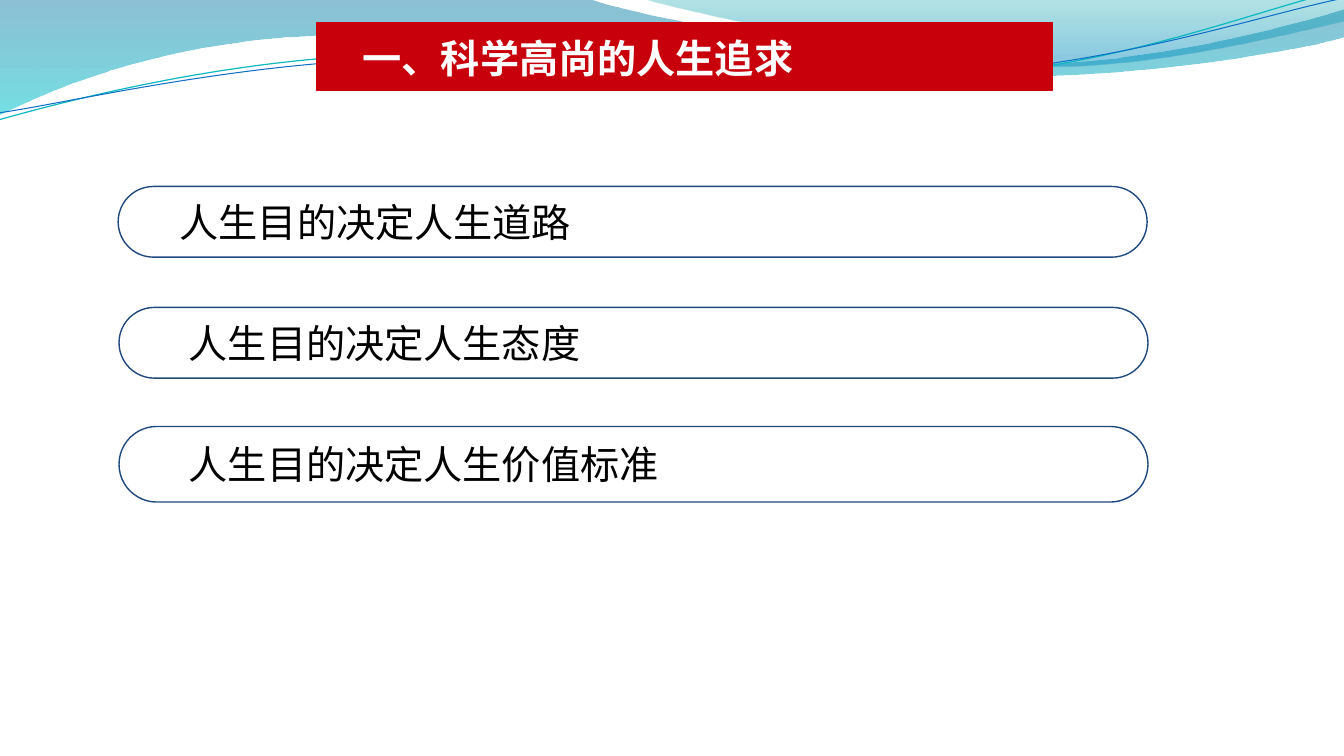
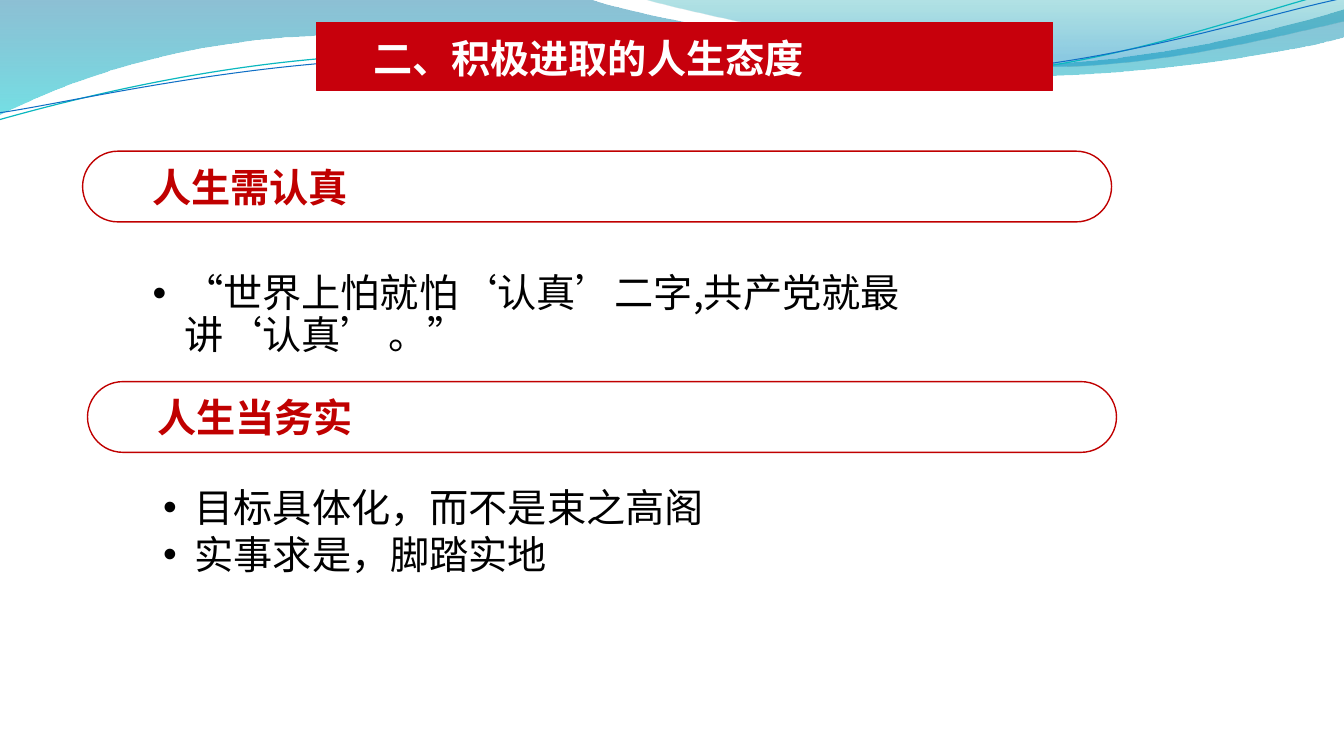
from dataclasses import dataclass

from lxml import etree
from pptx import Presentation
from pptx.dml.color import RGBColor
from pptx.enum import shapes, text
from pptx.oxml import ns
from pptx.util import Pt


@dataclass(frozen=True)
class Theme:
    font: str = "Noto Sans CJK SC"
    bullet_font: str = "Arial"
    size: int = 28
    black: str = "000000"
    white: str = "FFFFFF"
    navy: str = "1F497D"
    red: str = "C00000"
    banner: str = "C7000C"
    teal: str = "0AB8BF"
    blue: str = "0F6FC6"
    large_wave: tuple = ((0, "0074A1", 45), (1, "00C6CF", 55))
    small_wave: tuple = ((0, "00A1A9", 30), (0.8, "008BBF", 45))


THEME = Theme()
PILL_WIDTH, PILL_HEIGHT = 735, 50.5

LARGE_WAVE = [
    (0, 0), (422.5, -0.5),
    (456.5, 12, 637, 45.5, 728, 45.5), (819.5, 45.5, 920, 18.5, 960, 6.5),
    (961, 26),
    (944, 31.5, 835, 54.5, 715.5, 54), (597, 54, 366.5, 20, 247, 24.5),
    (124, 26, 44, 60, -0.5, 81.5),
]
SMALL_WAVE = [
    (460, -0.5),
    (489, 8, 654.5, 44.5, 738, 47), (821.5, 49.5, 923, 23, 960, 15),
    (960, 0),
]
TEAL_CURVE = [
    (-0.5, 85.5),
    (46, 72.5, 152, 44.5, 265.5, 39.5), (379.5, 34.5, 569, 62.5, 684, 54.5),
    (799, 47.5, 901.5, 6, 958.5, -7),
]
BLUE_CURVE = [
    (0, 80.5),
    (45.5, 74, 157, 47.5, 272, 42.5), (386.5, 38, 573, 59, 687.5, 52),
    (803, 44.5, 903.5, 10, 960.5, -1.5),
]


def color(value):
    return RGBColor.from_string(value)


def add_outline(slide, segments, close):
    points = [
        (Pt(segment[i]), Pt(segment[i + 1]))
        for segment in segments for i in range(0, len(segment), 2)
    ]
    builder = slide.shapes.build_freeform(*points[0])
    builder.add_line_segments(points[1:], close=close)
    shape = builder.convert_to_shape()
    shape.shadow.inherit = False
    lines = iter(list(shape.element.iter(ns.qn("a:lnTo"))))
    for segment in segments[1:]:
        first = next(lines)
        if len(segment) == 6:
            first.tag = ns.qn("a:cubicBezTo")
            for line in (next(lines), next(lines)):
                first.append(line[0])
                line.getparent().remove(line)
    return shape


def add_wave(slide, segments, stops):
    shape = add_outline(slide, segments, True)
    shape.line.fill.background()
    shape.fill.gradient()
    shape.fill.gradient_angle = 270
    for stop, (position, value, _) in zip(shape.fill.gradient_stops, stops):
        stop.position = position
        stop.color.rgb = color(value)
    marks = shape.element.iter(ns.qn("a:srgbClr"))
    for mark, (_, _, opacity) in zip(marks, stops):
        etree.SubElement(mark, ns.qn("a:alpha"), val=str(opacity * 1000))
    return shape


def add_curve(slide, segments, value, width):
    shape = add_outline(slide, segments, False)
    shape.fill.background()
    shape.line.color.rgb = color(value)
    shape.line.width = Pt(width)
    return shape


def add_waves_to_layout(slide):
    waves = [
        add_wave(slide, LARGE_WAVE, THEME.large_wave),
        add_wave(slide, SMALL_WAVE, THEME.small_wave),
        add_curve(slide, TEAL_CURVE, THEME.teal, 0.85),
        add_curve(slide, BLUE_CURVE, THEME.blue, 0.75),
    ]
    for number, wave in enumerate(waves, 101):
        wave.element.nvSpPr.cNvPr.id = number
        slide.slide_layout.shapes.element.append(wave.element)


def style_paragraph(paragraph, value, bold=False):
    paragraph.alignment = text.PP_ALIGN.LEFT
    font = paragraph.font
    font.name = THEME.font
    font.size = Pt(THEME.size)
    font.bold = bold
    font.color.rgb = color(value)
    properties = paragraph._p.pPr.find(ns.qn("a:defRPr"))
    etree.SubElement(properties, ns.qn("a:ea"), typeface=THEME.font)


def fill_label(shape, wording, value, indent, bold, top=0):
    frame = shape.text_frame
    frame.text = wording
    frame.word_wrap = True
    frame.auto_size = text.MSO_AUTO_SIZE.NONE
    frame.vertical_anchor = text.MSO_ANCHOR.MIDDLE
    frame.margin_left, frame.margin_top = Pt(indent), Pt(top)
    frame.margin_right = frame.margin_bottom = 0
    style_paragraph(frame.paragraphs[0], value, bold)


def set_title(slide, wording, indent):
    title = slide.shapes.title
    title.left, title.top, title.width, title.height = Pt(226), Pt(16), Pt(526), Pt(48.5)
    title.fill.solid()
    title.fill.fore_color.rgb = color(THEME.banner)
    title.line.color.rgb = color(THEME.banner)
    title.line.width = Pt(0.75)
    fill_label(title, wording, THEME.white, indent, True, top=1.5)


def add_pill(slide, wording, left, top, value, outline, bold=False, indent=42.5, height=PILL_HEIGHT):
    pill = slide.shapes.add_shape(
        shapes.MSO_SHAPE.ROUNDED_RECTANGLE, Pt(left), Pt(top), Pt(PILL_WIDTH), Pt(height))
    pill.adjustments[0] = 0.5
    pill.shadow.inherit = False
    pill.fill.background()
    pill.line.color.rgb = color(outline)
    pill.line.width = Pt(1)
    fill_label(pill, wording, value, indent, bold)


def add_bullets(slide, lines, left, top, width, height, line_spacing=1.0, space_before=0):
    frame = slide.shapes.add_textbox(Pt(left), Pt(top), Pt(width), Pt(height)).text_frame
    frame.word_wrap = True
    frame.text = "\n".join(lines)
    for paragraph in frame.paragraphs:
        paragraph.line_spacing = line_spacing
        paragraph.space_before = Pt(space_before)
        style_paragraph(paragraph, THEME.black)
        properties = paragraph._p.pPr
        properties.set("marL", str(Pt(22.5)))
        properties.set("indent", str(-Pt(22.5)))
        defaults = properties.find(ns.qn("a:defRPr"))
        defaults.addprevious(etree.Element(ns.qn("a:buFont"), typeface=THEME.bullet_font))
        defaults.addprevious(etree.Element(ns.qn("a:buChar"), char="•"))


def build_pursuit(slide):
    set_title(slide, "一、科学高尚的人生追求", 33)
    pills = [
        ("人生目的决定人生道路", 84.4, 133.2, 36.5, PILL_HEIGHT),
        ("人生目的决定人生态度", 85, 219.6, 42.5, PILL_HEIGHT),
        ("人生目的决定人生价值标准", 85, 304.6, 42, 54),
    ]
    for wording, left, top, indent, height in pills:
        add_pill(slide, wording, left, top, THEME.black, THEME.navy, indent=indent, height=height)


def build_attitude(slide):
    set_title(slide, "二、积极进取的人生态度", 40.5)
    for wording, left, top in (("人生需认真", 59, 108), ("人生当务实", 62.5, 272.6)):
        add_pill(slide, wording, left, top, THEME.red, THEME.red, bold=True)
    add_bullets(slide, ["目标具体化，而不是束之高阁", "实事求是，脚踏实地"],
                109.5, 341.5, 614, 75)
    add_bullets(slide, ["“世界上怕就怕‘认真’二字,共产党就最讲‘认真’ 。”"],
                102, 192, 553.5, 42, 0.9, 5.5)


def main():
    presentation = Presentation()
    presentation.slide_width, presentation.slide_height = Pt(960), Pt(540)
    layout = presentation.slide_layouts[5]
    pursuit, attitude = (presentation.slides.add_slide(layout) for _ in range(2))
    add_waves_to_layout(pursuit)
    build_pursuit(pursuit)
    build_attitude(attitude)
    presentation.save("out.pptx")


if __name__ == "__main__":
    main()
